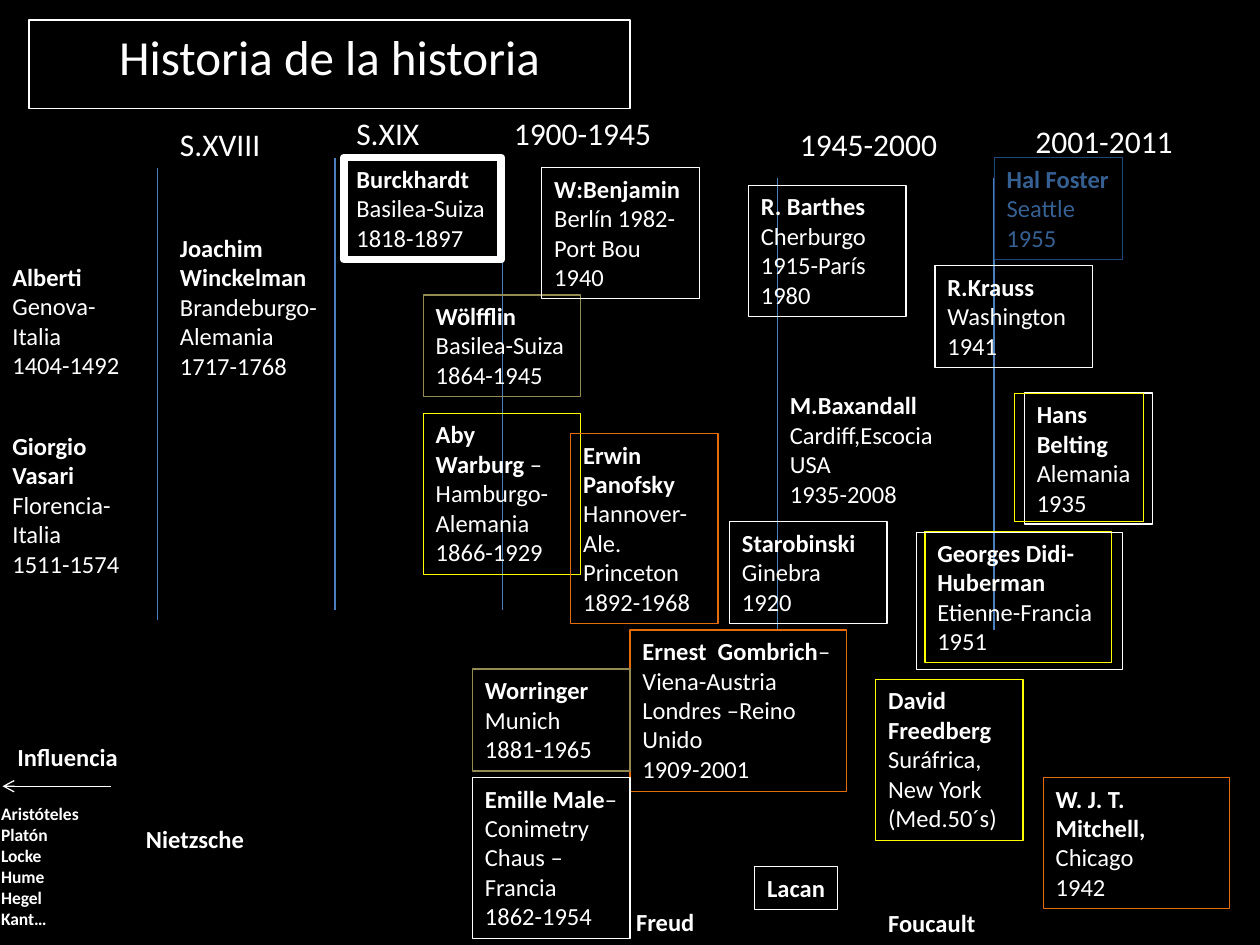
from pptx import Presentation
from pptx import util as u
from pptx.dml import color
from pptx.enum import shapes, text
from pptx.oxml import ns
from lxml import etree

WHITE, YELLOW, ORANGE, OLIVE = "FFFFFF", "FFFF00", "E46C0A", "948A54"
NAVY, BLUE, DIVIDER = "1F497D", "376092", "4B7EBC"


def rgb(value):
    return color.RGBColor.from_string(value)


class Timeline:
    font = "Calibri"
    title_size, period_size, person_size, list_size = 28, 18, 14, 10
    thin, hairline = 0.75, 0.25

    def __init__(self, slide):
        self.slide = slide
        slide.background.fill.solid()
        slide.background.fill.fore_color.rgb = rgb("000000")

    def outline(self, shape, hue, width):
        shape.line.color.rgb = rgb(hue)
        shape.line.width = u.Pt(width)

    def add_run(self, paragraph, words, size, bold=False, hue=WHITE):
        run = paragraph.add_run()
        run.text = words
        run.font.name = self.font
        run.font.size = u.Pt(size)
        run.font.bold = bold
        run.font.color.rgb = rgb(hue)

    def title(self, words, box):
        shape = self.slide.shapes.title
        shape.left, shape.top, shape.width, shape.height = map(u.Inches, box)
        self.outline(shape, WHITE, self.thin)
        frame = shape.text_frame
        frame.auto_size = text.MSO_AUTO_SIZE.NONE
        frame.vertical_anchor = text.MSO_ANCHOR.TOP
        paragraph = frame.paragraphs[0]
        paragraph.alignment = text.PP_ALIGN.CENTER
        self.add_run(paragraph, words, self.title_size)

    def text_box(self, box, border=None, width=thin, wrap=True):
        shape = self.slide.shapes.add_textbox(*map(u.Inches, box))
        if border:
            self.outline(shape, border, width)
        frame = shape.text_frame
        frame.word_wrap = wrap
        frame.auto_size = text.MSO_AUTO_SIZE.SHAPE_TO_FIT_TEXT
        return frame

    def period(self, words, box):
        frame = self.text_box(box)
        self.add_run(frame.paragraphs[0], words, self.period_size)

    def person(self, box, name, place="", *details, border=None, width=thin,
               hue=WHITE, wrap=True, same_line=False):
        frame = self.text_box(box, border, width, wrap)
        paragraph = frame.paragraphs[0]
        self.add_run(paragraph, name, self.person_size, True, hue)
        if same_line:
            self.add_run(paragraph, place, self.person_size, hue=hue)
            lines = details
        else:
            lines = [line for line in (place, *details) if line]
        for line in lines:
            self.add_run(frame.add_paragraph(), line, self.person_size, hue=hue)

    def bold_list(self, box, names):
        frame = self.text_box(box)
        for index, name in enumerate(names):
            paragraph = frame.add_paragraph() if index else frame.paragraphs[0]
            self.add_run(paragraph, name, self.list_size, True)

    def frame(self, box, hue):
        shape = self.slide.shapes.add_shape(
            shapes.MSO_SHAPE.RECTANGLE, *map(u.Inches, box))
        shape.shadow.inherit = False
        shape.fill.background()
        self.outline(shape, hue, self.hairline)

    def line(self, start, end, hue, arrow=False):
        connector = self.slide.shapes.add_connector(
            shapes.MSO_CONNECTOR.STRAIGHT, *map(u.Inches, (*start, *end)))
        self.outline(connector, hue, self.thin)
        if arrow:
            stroke = connector.line._get_or_add_ln()
            etree.SubElement(stroke, ns.qn("a:tailEnd"), type="arrow")
        properties = connector._element.spPr
        etree.SubElement(properties, ns.qn("a:effectLst"))


def main():
    presentation = Presentation()
    presentation.slide_width = u.Inches(10)
    presentation.slide_height = u.Inches(7.5)
    slide = presentation.slides.add_slide(presentation.slide_layouts[5])
    timeline = Timeline(slide)
    timeline.title("Historia de la historia", (0.23, 0.16, 4.77, 0.7))

    for x, top in ((1.25, 1.33), (2.66, 1.25), (3.99, 1.25),
                   (6.17, 1.41), (7.89, 1.41)):
        timeline.line((x, top), (x, top + 3.59), DIVIDER)

    for words, left, top, width in (
            ("S.XVIII", 1.33, 0.94, 0.94),
            ("S.XIX", 2.73, 0.86, 0.94),
            ("1900-1945", 3.98, 0.86, 1.56),
            ("1945-2000", 6.25, 0.94, 1.33),
            ("2001-2011", 8.12, 0.92, 1.56)):
        timeline.period(words, (left, top, width, 0.4))

    person = timeline.person
    person((0, 2.03, 1.06, 1.04), "Alberti", "Genova-Italia", "1404-1492")
    person((0, 3.37, 1.06, 1.28), "Giorgio Vasari", "Florencia-Italia", "1511-1574")
    person((1.33, 1.8, 1.64, 1.28), "Joachim Winckelman",
           "Brandeburgo-Alemania", "1717-1768")
    person((2.73, 1.25, 1.25, 0.81), "Burckhardt", "Basilea-Suiza", "1818-1897",
           border=WHITE, width=4.5)
    person((3.36, 2.34, 1.25, 0.81), "Wölfflin", "Basilea-Suiza", "1864-1945",
           border=OLIVE)
    person((3.36, 3.28, 1.25, 1.28), "Aby Warburg ", "–Hamburgo-Alemania",
           "1866-1929", border=YELLOW, same_line=True)
    person((4.53, 3.44, 1.17, 1.51), "Erwin Panofsky", "Hannover- Ale.",
           "Princeton", "1892-1968", border=ORANGE)
    person((5, 5, 1.72, 1.28), "Ernest  Gombrich", "– Viena-Austria",
           "Londres –Reino Unido", "1909-2001", border=ORANGE, same_line=True)
    person((6.17, 3.05, 1.41, 1.04), "M.Baxandall", "Cardiff,Escocia", "USA",
           "1935-2008")
    person((8.13, 3.12, 1.02, 1.04), "Hans Belting", "Alemania", "1935",
           border=WHITE)
    person((7.42, 2.11, 1.25, 0.81), "R.Krauss", "Washington", "1941",
           border=WHITE)
    person((7.34, 4.22, 1.48, 1.04), "Georges Didi-Huberman",
           "Etienne-Francia", "1951", border=YELLOW)
    person((6.95, 5.39, 1.17, 1.28), "David Freedberg", "Suráfrica,",
           "New York", "(Med.50´s)", border=YELLOW)
    person((4.3, 1.33, 1.25, 1.04), "W:Benjamin", "Berlín 1982-Port Bou 1940",
           border=WHITE)
    person((7.89, 1.25, 1.02, 0.81), "Hal Foster", "Seattle", "1955",
           border=NAVY, hue=BLUE, wrap=False)
    person((8.28, 6.17, 1.48, 1.04), "W. J. T. Mitchell,", "Chicago", "1942",
           border=ORANGE)
    person((5.94, 1.47, 1.25, 1.04), "R. Barthes", "Cherburgo 1915-París 1980",
           border=WHITE)
    person((5.79, 4.14, 1.25, 0.81), "Starobinski", "Ginebra 1920", border=WHITE)
    person((3.75, 5.31, 1.25, 0.81), "Worringer", "Munich", "1881-1965",
           border=OLIVE)
    person((3.75, 6.17, 1.25, 1.28), "Emille Male",
           "–Conimetry Chaus – Francia", "1862-1954", border=WHITE,
           same_line=True)
    person((4.95, 7.15, 0.67, 0.34), "Freud", wrap=False)
    person((1.06, 6.49, 0.99, 0.34), "Nietzsche", wrap=False)
    person((5.99, 6.88, 0.66, 0.34), "Lacan", border=WHITE, wrap=False)
    person((6.95, 7.16, 0.9, 0.34), "Foucault", wrap=False)

    timeline.frame((7.27, 4.22, 1.64, 1.09), WHITE)
    timeline.frame((8.05, 3.12, 1.02, 1.02), YELLOW)

    person((0.04, 5.84, 1.17, 0.34), "Influencia")
    timeline.line((0.88, 6.24), (0.02, 6.24), WHITE, arrow=True)
    timeline.bold_list((-0.09, 6.32, 1.25, 1.11),
                       ("Aristóteles", "Platón", "Locke", "Hume", "Hegel", "Kant…"))

    presentation.save("out.pptx")


if __name__ == "__main__":
    main()
